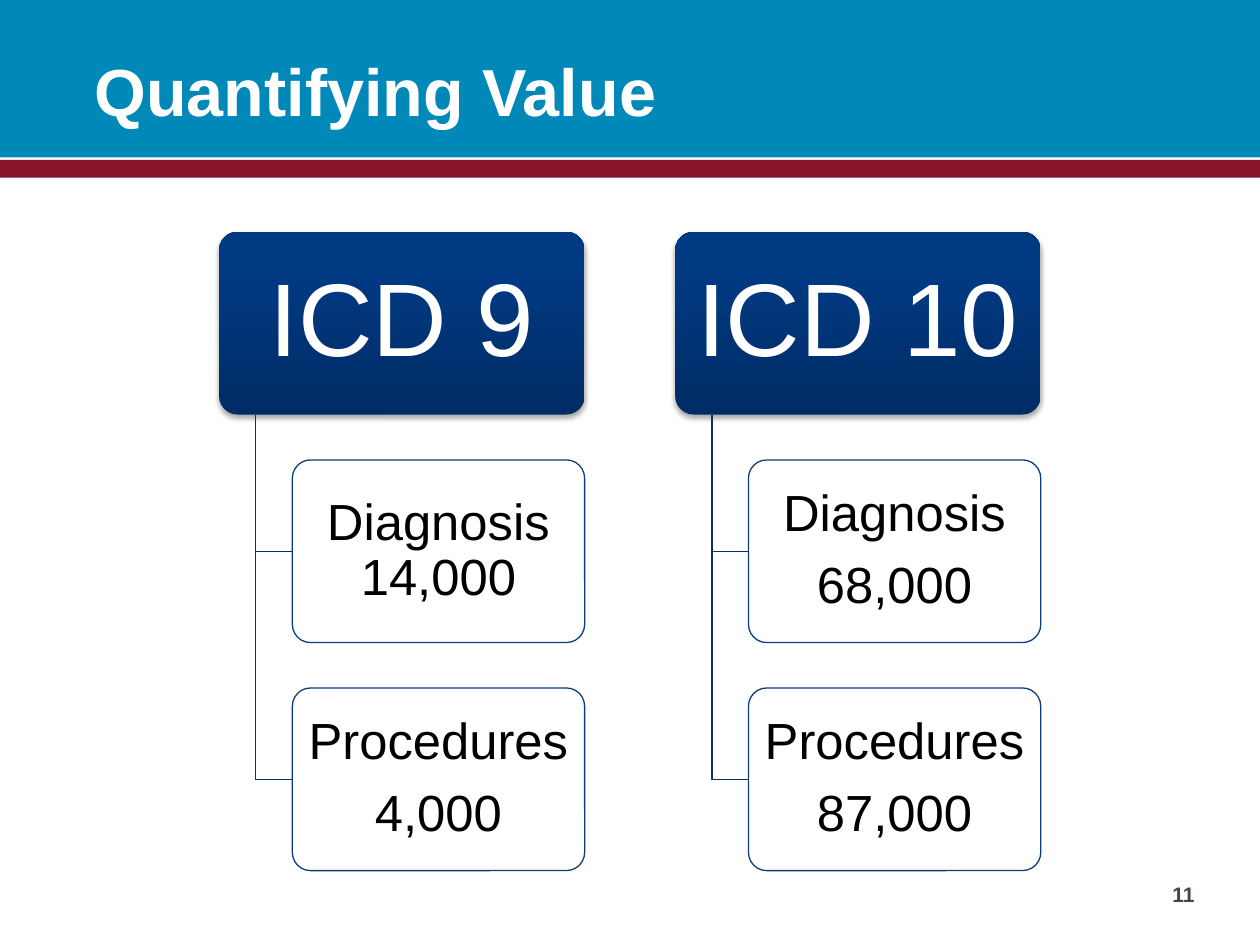
from lxml import etree
from pptx import Presentation
from pptx.dml.color import RGBColor
from pptx.enum.shapes import MSO_SHAPE
from pptx.enum.text import MSO_ANCHOR, MSO_AUTO_SIZE, PP_ALIGN
from pptx.oxml import parse_xml
from pptx.oxml.ns import nsdecls, qn
from pptx.util import Inches, Pt

TEAL = RGBColor(0x00, 0x88, 0xB8)
CRIMSON = RGBColor(0x8A, 0x15, 0x2B)
NAVY_DARK = RGBColor(0x00, 0x2C, 0x65)
NAVY = RGBColor(0x00, 0x3A, 0x83)
BOX_LINE = RGBColor(0x0C, 0x3D, 0x7B)
BRANCH_LINE = RGBColor(0x0A, 0x31, 0x63)
WHITE = RGBColor(0xFF, 0xFF, 0xFF)
BLACK = RGBColor(0x00, 0x00, 0x00)
SLATE = RGBColor(0x3A, 0x48, 0x4F)
FONT = "Arial"

# Code set heading, then its detail boxes as lists of paragraphs
CODE_SETS = [
    ("ICD 9", [["Diagnosis 14,000"], ["Procedures", "4,000"]]),
    ("ICD 10", [["Diagnosis", "68,000"], ["Procedures", "87,000"]]),
]
COLUMN_WIDTH = Inches(2.9)
COLUMN_PITCH = Inches(3.62)
BOX_HEIGHT = Inches(1.45)
ROW_PITCH = Inches(1.81)
BRANCH = Inches(0.29)

SHADOW = (
    f'<a:effectLst {nsdecls("a")}><a:outerShdw blurRad="39370" dist="22860" '
    'dir="5400000" rotWithShape="0"><a:srgbClr val="000000">'
    '<a:alpha val="35000"/></a:srgbClr></a:outerShdw></a:effectLst>'
)


def style_paragraph(para, size, color, align, bold=False):
    para.alignment = align
    font = para.font
    font.name, font.size, font.bold = FONT, Pt(size), bold
    font.color.rgb = color


def add_header(page, left, top, width):
    title = page.shapes.title
    # Colour bands behind the title
    for offset, height, color in ((0, 1.25, TEAL), (1.27, 0.14, CRIMSON)):
        band = page.shapes.add_shape(
            MSO_SHAPE.RECTANGLE, left, top + Inches(offset), width, Inches(height))
        band.shadow.inherit = False
        band.fill.solid()
        band.fill.fore_color.rgb = color
        band.line.fill.background()
        title.element.addprevious(band.element)
    # Title text
    title.left, title.top = left + Inches(0.5), top + Inches(0.25)
    title.width, title.height = width - Inches(1), Inches(0.92)
    frame = title.text_frame
    frame.text = "Quantifying Value"
    frame.auto_size = MSO_AUTO_SIZE.NONE
    frame.vertical_anchor = MSO_ANCHOR.MIDDLE
    frame.margin_left = Inches(0.25)
    style_paragraph(frame.paragraphs[0], 38, WHITE, PP_ALIGN.LEFT, bold=True)


def add_box(page, left, top, width, lines, size, color, margin):
    box = page.shapes.add_shape(
        MSO_SHAPE.ROUNDED_RECTANGLE, left, top, width, BOX_HEIGHT)
    box.adjustments[0] = 0.1
    box.shadow.inherit = False
    frame = box.text_frame
    frame.word_wrap = True
    frame.vertical_anchor = MSO_ANCHOR.MIDDLE
    frame.margin_left = frame.margin_right = Inches(margin)
    frame.margin_top = frame.margin_bottom = Inches(margin * 2 / 3)
    frame.text = "\n".join(lines)
    for para in frame.paragraphs:
        para.line_spacing = 0.9
        para.space_after = Pt(round(size * 0.35))
        style_paragraph(para, size, color, PP_ALIGN.CENTER)
    return box


def add_heading(page, left, top, text):
    box = add_box(page, left, top, COLUMN_WIDTH, [text], 59, WHITE, 0.12)
    box.line.fill.background()
    box.fill.gradient()
    box.fill.gradient_angle = 90
    stops = box.fill.gradient_stops
    for stop, position, color in zip(stops, (0, 0.8), (NAVY_DARK, NAVY)):
        stop.position = position
        stop.color.rgb = color
    properties = box.element.spPr
    properties.replace(properties.find(qn("a:effectLst")), parse_xml(SHADOW))


def add_branch(page, left, top, bottom):
    builder = page.shapes.build_freeform(left, top)
    builder.add_line_segments([(left, bottom), (left + BRANCH, bottom)], close=False)
    branch = builder.convert_to_shape()
    branch.shadow.inherit = False
    branch.fill.background()
    branch.line.color.rgb = BRANCH_LINE
    branch.line.width = Pt(0.75)


def add_detail(page, left, top, width, lines):
    box = add_box(page, left, top, width, lines, 29, BLACK, 0.06)
    box.fill.solid()
    box.fill.fore_color.rgb = WHITE
    tint = box.element.spPr.find(qn("a:solidFill"))[0]
    etree.SubElement(tint, qn("a:alpha"), val="90000")
    box.line.color.rgb = BOX_LINE
    box.line.width = Pt(0.75)


def add_code_set(page, left, top, heading, details):
    add_heading(page, left, top, heading)
    for row, lines in enumerate(details, start=1):
        row_top = top + row * ROW_PITCH
        add_branch(page, left + BRANCH, top + BOX_HEIGHT, row_top + BOX_HEIGHT // 2)
        add_detail(page, left + 2 * BRANCH, row_top, COLUMN_WIDTH - 2 * BRANCH, lines)


def add_page_number(page, left, top, width, height):
    box = page.shapes.add_textbox(left, top, width, height)
    box.text_frame.word_wrap = True
    box.text_frame.text = "11"
    style_paragraph(box.text_frame.paragraphs[0], 12, SLATE, PP_ALIGN.RIGHT, bold=True)


def main():
    deck = Presentation()
    deck.slide_width, deck.slide_height = Inches(10), Inches(7.5)
    page = deck.slides.add_slide(deck.slide_layouts[5])
    add_header(page, 0, 0, deck.slide_width)
    for column, (heading, details) in enumerate(CODE_SETS):
        left = Inches(1.74) + column * COLUMN_PITCH
        add_code_set(page, left, Inches(1.84), heading, details)
    add_page_number(page, 0, Inches(6.95), Inches(9.58), Inches(0.55))
    deck.save("out.pptx")


if __name__ == "__main__":
    main()
